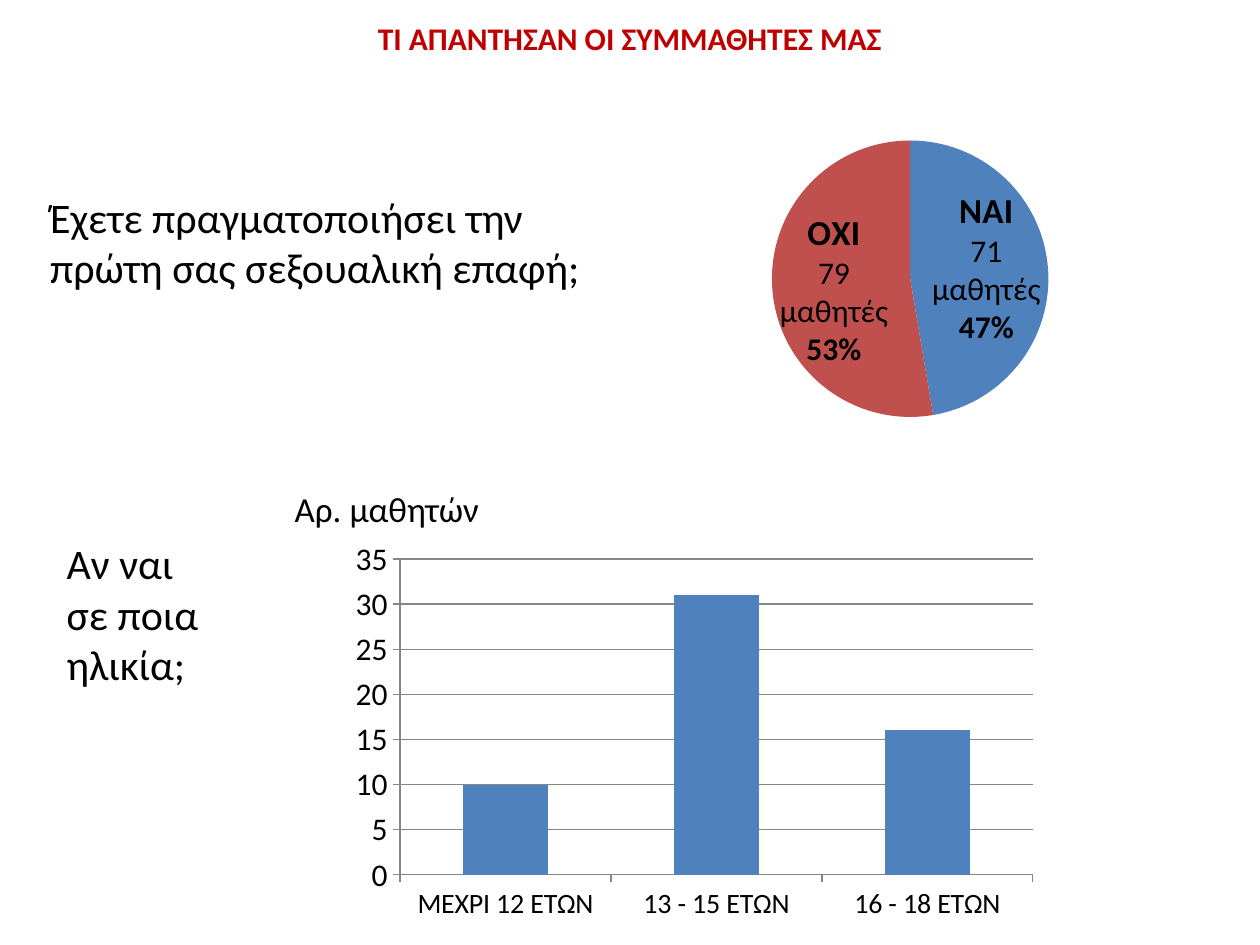
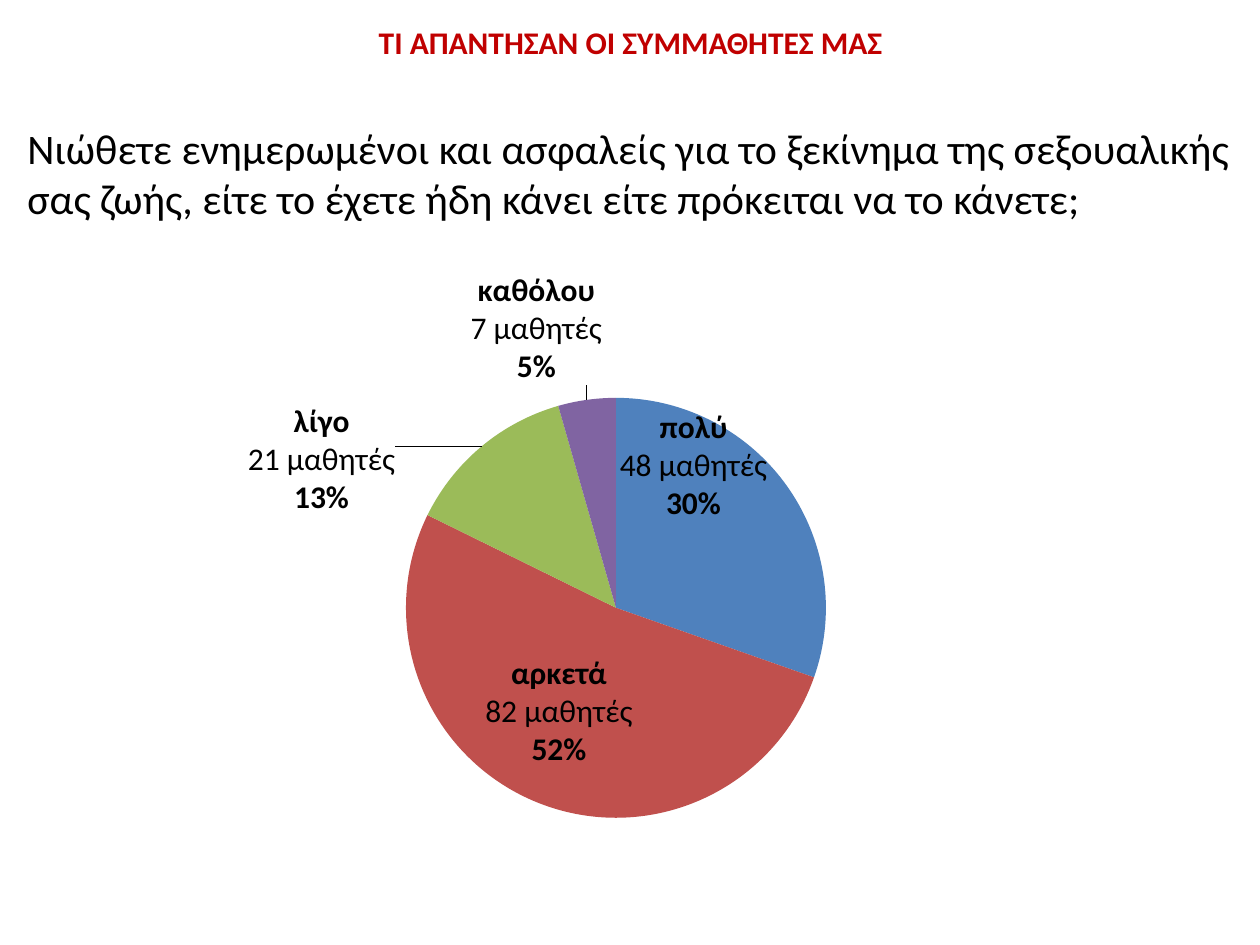
from lxml import etree
from pptx import Presentation
from pptx.chart.data import CategoryChartData
from pptx.dml.color import RGBColor
from pptx.enum.chart import XL_CHART_TYPE, XL_LABEL_POSITION, XL_TICK_MARK
from pptx.enum.text import MSO_ANCHOR, MSO_AUTO_SIZE, PP_ALIGN
from pptx.oxml.ns import qn
from pptx.util import Pt

# Shared style
FONT = "Calibri"
BLACK = RGBColor(0x00, 0x00, 0x00)
RED = RGBColor(0xC0, 0x00, 0x00)
GREY = RGBColor(0x86, 0x86, 0x86)
BLUE = RGBColor(0x4F, 0x81, 0xBD)
SLICE_COLOURS = [
    BLUE,
    RGBColor(0xC0, 0x50, 0x4D),
    RGBColor(0x9B, 0xBB, 0x59),
    RGBColor(0x80, 0x64, 0xA2),
]
TITLE_FORMAT = {"name": FONT, "size": Pt(18), "bold": True}
QUESTION_FORMAT = {"name": FONT, "size": Pt(24)}
CAPTION_FORMAT = {"name": FONT, "size": Pt(20)}
INSIDE, CENTRE, OUTSIDE = (
    XL_LABEL_POSITION.INSIDE_END,
    XL_LABEL_POSITION.CENTER,
    XL_LABEL_POSITION.OUTSIDE_END,
)

# Content: boxes are (left, top, width, height) in points
TITLE = "ΤΙ ΑΠΑΝΤΗΣΑΝ ΟΙ ΣΥΜΜΑΘΗΤΕΣ ΜΑΣ"
UNIT = "μαθητές"
# Pie answers: name, pupils, percent, label position, label shift (share of chart)
SLIDES = [
    {
        "title_box": (8.6, 7.2, 702.7, 46),
        "texts": [
            ("Έχετε πραγματοποιήσει την πρώτη σας σεξουαλική επαφή;",
             (21.6, 105.8, 317.5, 65.4), QUESTION_FORMAT),
            ("Αν ναι σε ποια ηλικία;", (31, 303.8, 102.2, 94.5), QUESTION_FORMAT),
            ("Αρ. μαθητών", (161.3, 275, 272.2, 31.5), CAPTION_FORMAT),
        ],
        "pie": {
            "box": (339.1, 54.7, 362.9, 209.5),
            "plot": (441.1, 80.3, 158, 158),
            "name_size": Pt(20),
            "answers": [
                ("NAI", 71, "47%", INSIDE, None),
                ("OXI", 79, "53%", INSIDE, None),
            ],
        },
        "columns": {
            "box": (195.8, 303.8, 402.5, 226.8),
            "plot": (228.6, 319.4, 361.7, 180.6),
            "ages": [("ΜΕΧΡΙ 12 ΕΤΩΝ", 10), ("13 - 15 ΕΤΩΝ", 31), ("16 - 18 ΕΤΩΝ", 16)],
        },
    },
    {
        "title_box": (20.2, 9.4, 680.4, 46),
        "texts": [
            ("Νιώθετε ενημερωμένοι και ασφαλείς για το ξεκίνημα της σεξουαλικής "
             "σας ζωής, είτε το έχετε ήδη κάνει είτε πρόκειται να το κάνετε;",
             (8.6, 66.2, 702.7, 65.5), QUESTION_FORMAT),
        ],
        "pie": {
            "box": (127.4, 149, 465.1, 391),
            "plot": (232, 227.4, 240, 240),
            "name_size": Pt(18),
            "answers": [
                ("πολύ", 48, "30%", CENTRE, (-0.01, -0.12)),
                ("αρκετά", 82, "52%", CENTRE, (-0.02, 0.01)),
                ("λίγο", 21, "13%", OUTSIDE, (-0.1, 0.11)),
                ("καθόλου", 7, "5%", OUTSIDE, (0.02, -0.01)),
            ],
        },
    },
]


def apply_format(font, values, colour=BLACK):
    for name, value in values.items():
        setattr(font, name, value)
    font.color.rgb = colour


def make_layout(values):
    """Manual chart layout with the given settings."""
    layout = etree.Element(qn("c:layout"))
    manual = etree.SubElement(layout, qn("c:manualLayout"))
    for name, value in values.items():
        etree.SubElement(manual, qn(f"c:{name}")).set("val", str(value))
    return layout


def place_plot(chart, box, plot):
    """Fix the inner plot area, given in slide points, inside the chart box."""
    left, top, width, height = box
    values = {
        "layoutTarget": "inner", "xMode": "edge", "yMode": "edge",
        "x": round((plot[0] - left) / width, 4),
        "y": round((plot[1] - top) / height, 4),
        "w": round(plot[2] / width, 4),
        "h": round(plot[3] / height, 4),
    }
    area = chart.plots[0]._element.getparent()
    for old_layout in area.findall(qn("c:layout")):
        area.remove(old_layout)
    area.insert(0, make_layout(values))


def add_title(slide, box):
    title = slide.shapes.title
    title.left, title.top, title.width, title.height = map(Pt, box)
    frame = title.text_frame
    frame.text = TITLE
    frame.vertical_anchor = MSO_ANCHOR.TOP
    frame.auto_size = MSO_AUTO_SIZE.NONE
    paragraph = frame.paragraphs[0]
    paragraph.alignment = PP_ALIGN.CENTER
    apply_format(paragraph.runs[0].font, TITLE_FORMAT, RED)


def add_text(slide, text, box, values):
    frame = slide.shapes.add_textbox(*map(Pt, box)).text_frame
    frame.word_wrap = True
    frame.auto_size = MSO_AUTO_SIZE.SHAPE_TO_FIT_TEXT
    frame.text = text
    apply_format(frame.paragraphs[0].runs[0].font, values)


def add_chart(slide, kind, box, plot, points):
    data = CategoryChartData()
    data.categories = [name for name, _ in points]
    data.add_series("Series 1", [value for _, value in points])
    chart = slide.shapes.add_chart(kind, *map(Pt, box), data).chart
    chart.has_legend = False
    chart.has_title = False
    apply_format(chart.font, {"name": FONT, "size": Pt(10)})
    place_plot(chart, box, plot)
    return chart


def add_pie(slide, box, plot, name_size, answers):
    chart = add_chart(slide, XL_CHART_TYPE.PIE, box, plot,
                      [answer[:2] for answer in answers])
    chart.plots[0].vary_by_categories = True
    series = chart.plots[0].series[0]
    labels = series.data_labels
    shown = ("show_value", "show_category_name", "show_percentage")
    for name in shown:
        setattr(labels, name, True)
    apply_format(labels.font, {"name": FONT, "size": Pt(18)})

    for index, (name, pupils, percent, position, shift) in enumerate(answers):
        point = series.points[index]
        point.format.fill.solid()
        point.format.fill.fore_color.rgb = SLICE_COLOURS[index]

        # Label: bold name, pupils, bold percent
        label = point.data_label
        frame = label.text_frame
        lines = [(name, name_size, True), (f"{pupils} {UNIT}", Pt(18), False),
                 (percent, Pt(18), True)]
        for number, (text, size, bold) in enumerate(lines):
            paragraph = frame.add_paragraph() if number else frame.paragraphs[0]
            run = paragraph.add_run()
            run.text = text
            apply_format(run.font, {"name": FONT, "size": size, "bold": bold})
        label.position = position
        element = series._element.find(qn("c:dLbls")).findall(qn("c:dLbl"))[index]
        for flag in ("showVal", "showCatName", "showPercent"):
            element.find(qn(f"c:{flag}")).set("val", "1")
        if shift:
            element.insert(1, make_layout(dict(zip("xy", shift))))


def add_columns(slide, box, plot, ages):
    chart = add_chart(slide, XL_CHART_TYPE.COLUMN_CLUSTERED, box, plot, ages)
    columns = chart.plots[0]
    columns.vary_by_categories = False
    columns.gap_width = 150
    fill = columns.series[0].format.fill
    fill.solid()
    fill.fore_color.rgb = BLUE

    value_axis = chart.value_axis
    for name, value in {"minimum_scale": 0, "maximum_scale": 35, "major_unit": 5,
                        "has_major_gridlines": True}.items():
        setattr(value_axis, name, value)
    for axis, size in ((chart.category_axis, 16), (value_axis, 18)):
        axis.major_tick_mark = XL_TICK_MARK.OUTSIDE
        apply_format(axis.tick_labels.font, {"name": FONT, "size": Pt(size)})
    for part in (chart.category_axis, value_axis, value_axis.major_gridlines):
        part.format.line.color.rgb = GREY
        part.format.line.width = Pt(0.75)


def main():
    presentation = Presentation()
    presentation.slide_width, presentation.slide_height = Pt(720), Pt(540)
    title_only = presentation.slide_layouts[5]
    for content in SLIDES:
        slide = presentation.slides.add_slide(title_only)
        add_title(slide, content["title_box"])
        add_pie(slide, **content["pie"])
        if "columns" in content:
            add_columns(slide, **content["columns"])
        for text, box, values in content["texts"]:
            add_text(slide, text, box, values)
    presentation.save("out.pptx")


if __name__ == "__main__":
    main()
